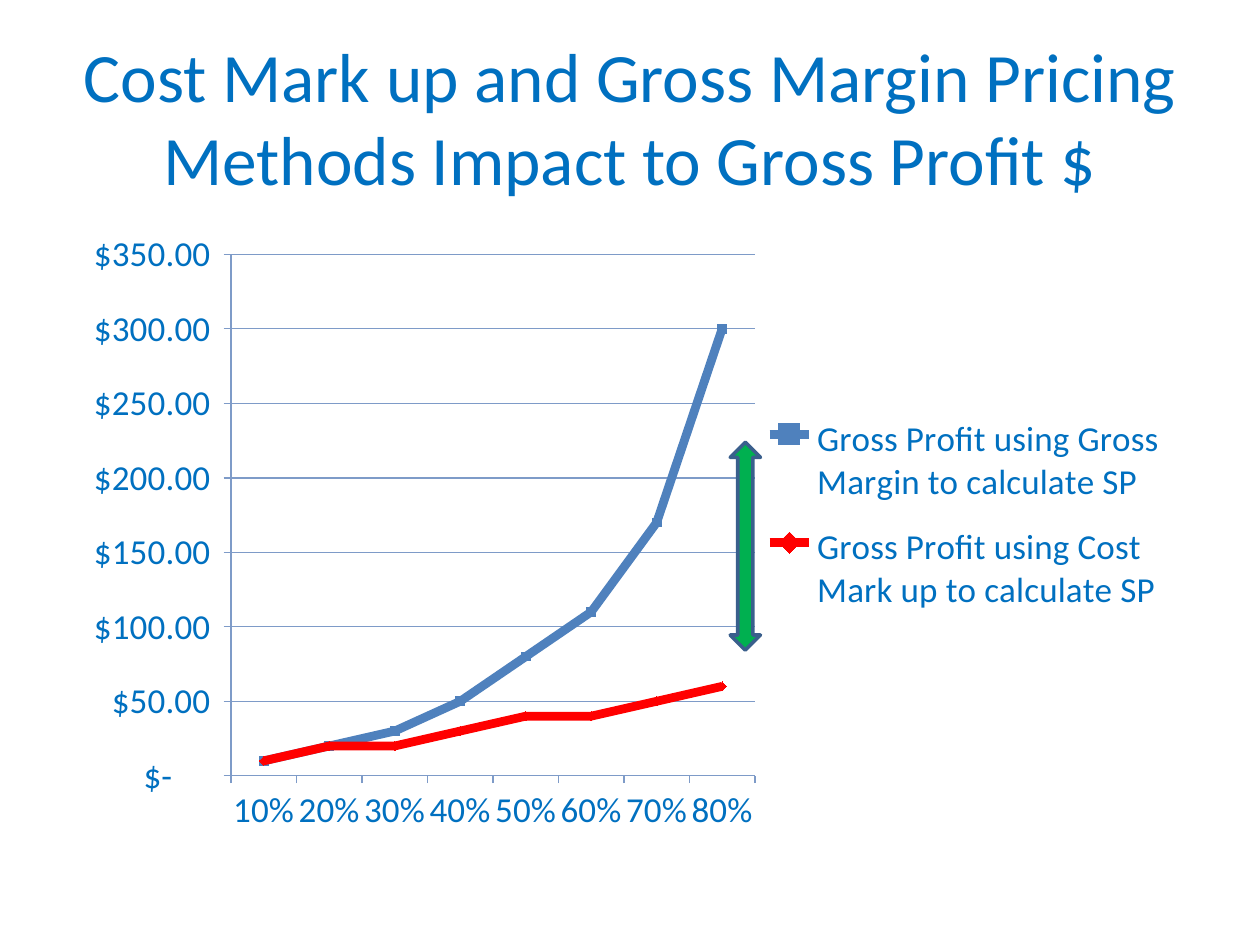
from lxml import etree
from pptx import Presentation
from pptx import util as u
from pptx.chart import data as cd
from pptx.dml import color
from pptx.enum import chart as ch, shapes, text
from pptx.oxml import ns

BLUE = "0070C0"
AXIS = "7E9BC8"
MONEY = r'_("$"* #,##0.00_);_("$"* \(#,##0.00\);_("$"* "-"??_);_(@_)'
RATES = [n / 10 for n in range(1, 9)]
SERIES = [
    ("Gross Profit using Gross Margin to calculate SP",
     [10, 20, 30, 50, 80, 110, 170, 300],
     "4F81BD", ch.XL_MARKER_STYLE.SQUARE),
    ("Gross Profit using Cost Mark up to calculate SP",
     [10, 20, 20, 30, 40, 40, 50, 60],
     "FF0000", ch.XL_MARKER_STYLE.DIAMOND),
]


def rgb(code):
    return color.RGBColor.from_string(code)


def style(font, size=20, hue=BLUE, face="Calibri"):
    font.size, font.name, font.bold = u.Pt(size), face, False
    font.color.rgb = rgb(hue)


def write(frame, words, align=text.PP_ALIGN.CENTER, **form):
    frame.word_wrap = True
    frame.vertical_anchor = text.MSO_ANCHOR.MIDDLE
    para = frame.paragraphs[0]
    para.alignment = align
    run = para.add_run()
    run.text = words
    style(run.font, **form)


def place(node, outer, box, inner=False):
    for old in node.findall(ns.qn("c:layout")):
        node.remove(old)
    lay = etree.Element(ns.qn("c:layout"))
    man = etree.SubElement(lay, ns.qn("c:manualLayout"))
    rules = [("layoutTarget", "inner")] if inner else []
    rules += [("xMode", "edge"), ("yMode", "edge")]
    rules += [(tag, part / outer[2 + i % 2])
              for i, (tag, part) in enumerate(zip("xywh", box))]
    for tag, val in rules:
        etree.SubElement(man, ns.qn("c:" + tag)).set("val", str(val))
    spot = node.find(ns.qn("c:legendPos"))
    node.insert(0 if spot is None else node.index(spot) + 1, lay)


class Deck:
    def __init__(self):
        self.prs = Presentation()
        self.prs.slide_width, self.prs.slide_height = u.Pt(720), u.Pt(540)
        self.slide = self.prs.slides.add_slide(self.prs.slide_layouts[6])

    def title(self, words, *box):
        shape = self.slide.shapes.add_textbox(*map(u.Pt, box))
        write(shape.text_frame, words, size=39.6)

    def chart(self, *box):
        data = cd.CategoryChartData(number_format=MONEY)
        data.categories = RATES
        data.categories.number_format = "0%"
        for name, vals, *_ in SERIES:
            data.add_series(name, vals)
        chart = self.slide.shapes.add_chart(
            ch.XL_CHART_TYPE.LINE_MARKERS, *map(u.Pt, box), data).chart
        style(chart.font)
        chart.has_title = False
        chart.has_legend = True
        chart.legend.position = ch.XL_LEGEND_POSITION.RIGHT
        chart.legend.include_in_layout = False
        style(chart.legend.font)
        plot = chart.plots[0]
        plot.vary_by_categories = False
        for line, (_, _, hue, mark) in zip(plot.series, SERIES):
            self.line(line, hue, mark)
        self.axis(chart.category_axis, "0%")
        self.axis(chart.value_axis, MONEY)
        chart.value_axis.minimum_scale = 0
        chart.value_axis.maximum_scale = 350
        chart.value_axis.major_unit = 50
        grid = chart.value_axis.major_gridlines.format.line
        grid.color.rgb, grid.width = rgb(AXIS), u.Pt(0.75)
        area = plot._element.getparent()
        place(area, box, (96, 19.4, 299.4, 298), inner=True)
        place(chart.legend._element, box, (398.5, 100, 233.3, 136))

    def line(self, line, hue, mark):
        line.smooth = False
        line.format.line.color.rgb = rgb(hue)
        line.format.line.width = u.Pt(5)
        line.marker.style, line.marker.size = mark, 5
        line.marker.format.fill.solid()
        line.marker.format.fill.fore_color.rgb = rgb(hue)
        line.marker.format.line.color.rgb = rgb(hue)

    def axis(self, axis, form):
        axis.has_major_gridlines = form == MONEY
        axis.major_tick_mark = ch.XL_TICK_MARK.OUTSIDE
        axis.minor_tick_mark = ch.XL_TICK_MARK.NONE
        axis.tick_labels.number_format = form
        axis.tick_labels.number_format_is_linked = False
        style(axis.tick_labels.font)
        axis._element.find(ns.qn("c:txPr")).find(ns.qn("a:bodyPr")).set("rot", "0")
        axis.format.line.color.rgb = rgb(AXIS)
        axis.format.line.width = u.Pt(0.75)

    def arrow(self, fill, edge, *box):
        shape = self.slide.shapes.add_shape(
            shapes.MSO_SHAPE.UP_DOWN_ARROW, *map(u.Pt, box))
        shape.shadow.inherit = False
        shape.fill.solid()
        shape.fill.fore_color.rgb = rgb(fill)
        shape.line.color.rgb = rgb(edge)
        shape.line.width = u.Pt(2)


def main():
    deck = Deck()
    deck.title("Cost Mark up and Gross Margin Pricing Methods Impact to Gross Profit $",
               36, 21.6, 648, 90)
    deck.chart(36, 126, 648, 356.4)
    deck.arrow("00B050", "3A5F8C", 417.3, 252.7, 17.3, 118.8)
    deck.prs.save("out.pptx")


if __name__ == "__main__":
    main()
